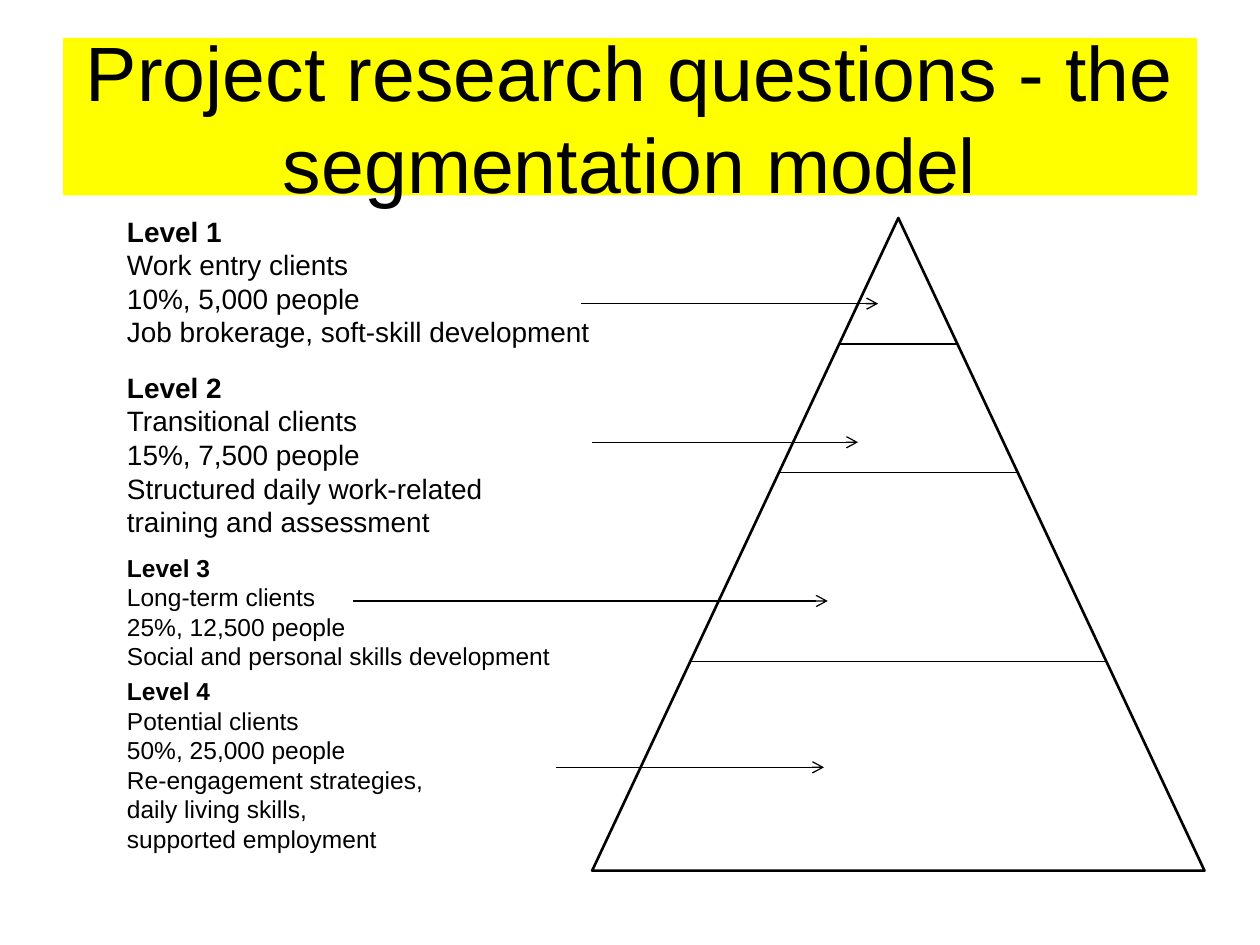
import pptx
import pptx.util
import pptx.dml.color
import pptx.enum.shapes
import pptx.enum.text
import pptx.oxml
import pptx.oxml.ns

Inches = pptx.util.Inches
Pt = pptx.util.Pt
RGBColor = pptx.dml.color.RGBColor
Align = pptx.enum.text.PP_ALIGN
Anchor = pptx.enum.text.MSO_ANCHOR

BLACK = RGBColor(0x00, 0x00, 0x00)
WHITE = RGBColor(0xFF, 0xFF, 0xFF)
YELLOW = RGBColor(0xFF, 0xFF, 0x00)
FONT = "Arial"
WIDTH, HEIGHT = 10, 7.5

# Content: each level has its text, and its arrow as (start x, end x, y)
TITLE = "Project research questions - the segmentation model"
LEVELS = [
    {"lines": ["Level 1", "Work entry clients", "10%, 5,000 people",
               "Job brokerage, soft-skill development"],
     "top": 1.65, "size": 16, "arrow": (4.61, 6.97, 2.41)},
    {"lines": ["Level 2", "Transitional clients", "15%, 7,500 people",
               "Structured daily work-related", "training and assessment"],
     "top": 2.89, "size": 16, "arrow": (4.7, 6.81, 3.51)},
    {"lines": ["Level 3", "Long-term clients", "25%, 12,500 people",
               "Social and personal skills development"],
     "top": 4.34, "size": 14, "arrow": (2.8, 6.57, 4.77)},
    {"lines": ["Level 4", "Potential clients", "50%, 25,000 people",
               "Re-engagement strategies,", "daily living skills,",
               "supported employment"],
     "top": 5.32, "size": 14, "arrow": (4.41, 6.54, 6.09)},
]
DIVIDERS = [2.73, 3.75, 5.25]

# Layout
MARGIN = WIDTH * 0.05
TEXT_LEFT, TEXT_WIDTH = 0.91, 4.57
PYRAMID_LEFT, PYRAMID_TOP, PYRAMID_WIDTH, PYRAMID_HEIGHT = 4.7, 1.73, 4.86, 5.18
LINE_FACTOR = 1.2


def write(frame, lines, size, align=Align.LEFT, anchor=Anchor.TOP, bold_first=False):
    frame.word_wrap = True
    frame.vertical_anchor = anchor
    for index, text in enumerate(lines):
        para = frame.paragraphs[0] if index == 0 else frame.add_paragraph()
        para.alignment = align
        span = para.add_run()
        span.text = text
        span.font.name = FONT
        span.font.size = Pt(size)
        span.font.bold = bold_first and index == 0
        span.font.color.rgb = BLACK


def add_line(page, left, right, y, arrow=False):
    line = page.shapes.add_connector(
        pptx.enum.shapes.MSO_CONNECTOR.STRAIGHT,
        Inches(left), Inches(y), Inches(right), Inches(y))
    line.line.color.rgb = BLACK
    line.line.width = Pt(0.75)
    if arrow:
        stroke = line.line._get_or_add_ln()
        stroke.append(pptx.oxml.parse_xml(
            f'<a:tailEnd {pptx.oxml.ns.nsdecls("a")} type="arrow"/>'))
    properties = line._element.spPr
    properties.append(pptx.oxml.parse_xml(
        f'<a:effectLst {pptx.oxml.ns.nsdecls("a")}/>'))


def main():
    deck = pptx.Presentation()
    deck.slide_width, deck.slide_height = Inches(WIDTH), Inches(HEIGHT)
    page = deck.slides.add_slide(deck.slide_layouts[5])

    # Title band
    title = page.shapes.title
    title.left, title.top = Inches(MARGIN), Inches(HEIGHT * 0.04)
    title.width, title.height = Inches(WIDTH - 2 * MARGIN), Inches(HEIGHT / 6)
    title.fill.solid()
    title.fill.fore_color.rgb = YELLOW
    write(title.text_frame, [TITLE], 44, align=Align.CENTER, anchor=Anchor.MIDDLE)
    title.text_frame.auto_size = pptx.enum.text.MSO_AUTO_SIZE.NONE

    # Pyramid
    pyramid = page.shapes.add_shape(
        pptx.enum.shapes.MSO_SHAPE.ISOSCELES_TRIANGLE,
        Inches(PYRAMID_LEFT), Inches(PYRAMID_TOP),
        Inches(PYRAMID_WIDTH), Inches(PYRAMID_HEIGHT))
    pyramid.shadow.inherit = False
    pyramid.fill.solid()
    pyramid.fill.fore_color.rgb = WHITE
    pyramid.line.color.rgb = BLACK
    pyramid.line.width = Pt(1.5)

    # Dividers span the pyramid at their height
    center = PYRAMID_LEFT + PYRAMID_WIDTH / 2
    for y in DIVIDERS:
        half = PYRAMID_WIDTH / 2 * (y - PYRAMID_TOP) / PYRAMID_HEIGHT
        add_line(page, center - half, center + half, y)

    # Level descriptions and their arrows
    for level in LEVELS:
        height = 0.1 + len(level["lines"]) * level["size"] * LINE_FACTOR / 72
        box = page.shapes.add_textbox(
            Inches(TEXT_LEFT), Inches(level["top"]), Inches(TEXT_WIDTH), Inches(height))
        write(box.text_frame, level["lines"], level["size"], bold_first=True)
        add_line(page, *level["arrow"], arrow=True)

    deck.save("out.pptx")


if __name__ == "__main__":
    main()
